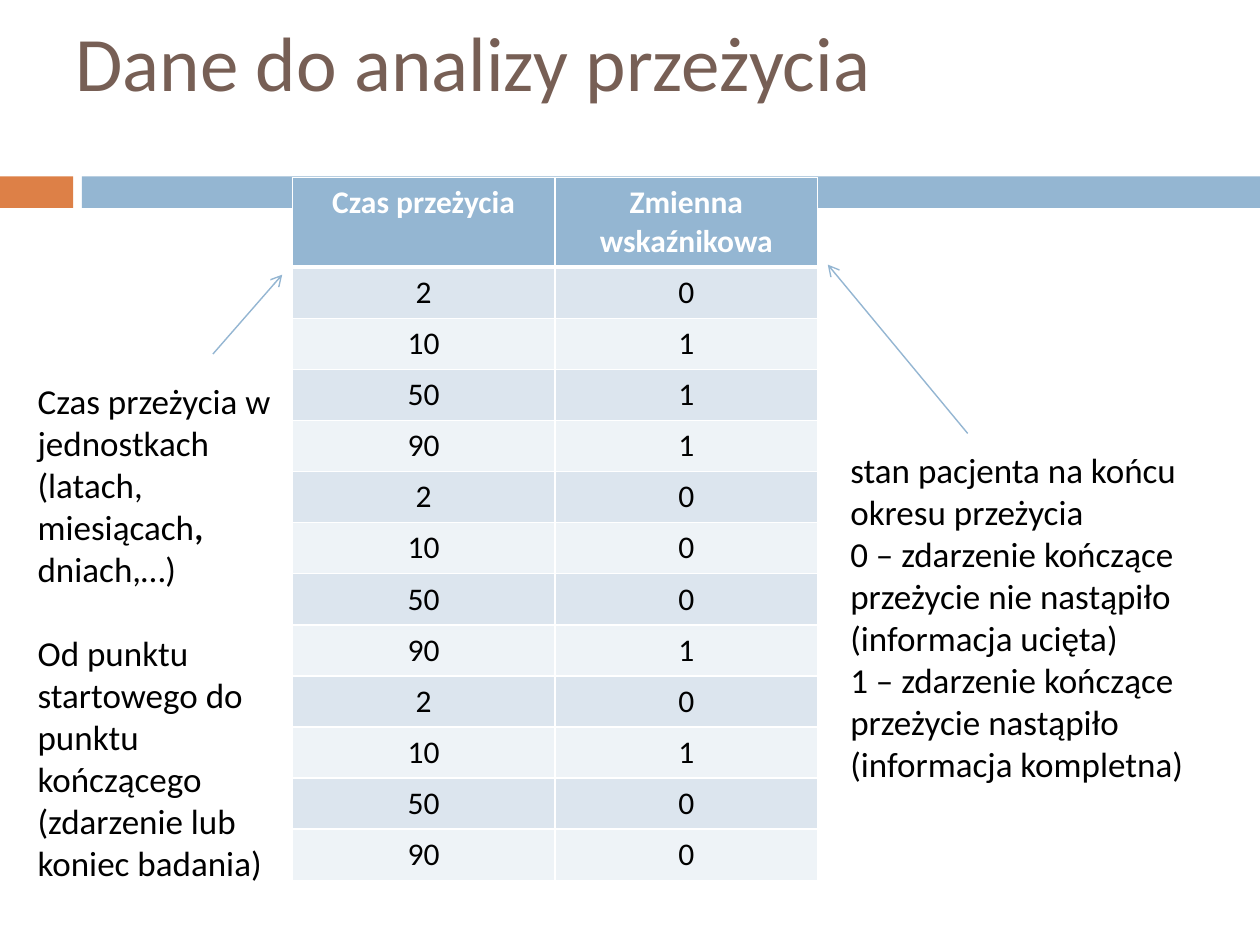
from dataclasses import dataclass

from pptx import Presentation
from pptx.dml.color import RGBColor
from pptx.enum.shapes import MSO_CONNECTOR, MSO_SHAPE
from pptx.enum.text import MSO_ANCHOR, MSO_AUTO_SIZE, PP_ALIGN
from pptx.oxml.ns import qn
from pptx.oxml.xmlchemy import OxmlElement
from pptx.slide import Slide
from pptx.table import _Cell
from pptx.text.text import _Paragraph
from pptx.util import Inches, Pt

COLUMNS, ROWS = 100, 75
WIDTH, HEIGHT = Inches(10), Inches(7.5)
FONT = "Calibri"
BLUE, ORANGE, BROWN = "94B6D2", "DD8047", "775F55"
WHITE, BLACK = "FFFFFF", "000000"
STRIPES = ("DCE5EE", "EEF3F7")
HEADER_ROWS, TABLE_ROWS = 7, 55.7

HEADERS = ("Czas przeżycia", "Zmienna wskaźnikowa")
TIMES = (2, 10, 50, 90) * 3
STATES = (0, 1, 1, 1, 0, 0, 0, 1, 0, 1, 0, 0)


@dataclass(frozen=True)
class Area:
    column: float
    row: float
    columns: float
    rows: float

    def box(self) -> tuple[int, int, int, int]:
        return (across(self.column), down(self.row),
                across(self.columns), down(self.rows))


@dataclass(frozen=True)
class Band:
    area: Area
    fill: str


@dataclass(frozen=True)
class Arrow:
    start: tuple[float, float]
    end: tuple[float, float]


@dataclass(frozen=True)
class Note:
    area: Area
    paragraphs: tuple[tuple[tuple[str, bool], ...], ...]
    gap: float = 0


BANDS = (
    Band(Area(0, 14, 5.8, 2.5), ORANGE),
    Band(Area(6.5, 14, 93.5, 2.5), BLUE),
)
ARROWS = (
    Arrow((76.8, 34.4), (65.7, 21)),
    Arrow((16.9, 28.1), (22.4, 21.8)),
)
NOTES = (
    Note(Area(66.5, 35.1, 29.1, 27.9), (
        (("stan pacjenta na końcu okresu przeżycia", False),),
        (("0 – zdarzenie kończące przeżycie nie nastąpiło", False),),
        (("(informacja ucięta)", False),),
        (("1 – zdarzenie kończące przeżycie nastąpiło (informacja kompletna)", False),),
    )),
    Note(Area(2, 29.6, 20.5, 41.4), (
        (("Czas przeżycia w jednostkach (latach, miesiącach", False),
         (", ", True), ("dniach,…)", False)),
        (("Od punktu startowego do punktu kończącego (zdarzenie lub koniec badania)", False),),
    ), gap=24),
)


def across(columns: float) -> int:
    return round(WIDTH * columns / COLUMNS)


def down(rows: float) -> int:
    return round(HEIGHT * rows / ROWS)


def colour(value: str) -> RGBColor:
    return RGBColor.from_string(value)


def add_run(paragraph: _Paragraph, text: str, size: float, value: str,
            bold: bool = False) -> None:
    run = paragraph.add_run()
    run.text = text
    run.font.name = FONT
    run.font.size = Pt(size)
    run.font.bold = bold
    run.font.color.rgb = colour(value)


def draw_band(slide: Slide, band: Band) -> None:
    shape = slide.shapes.add_shape(MSO_SHAPE.RECTANGLE, *band.area.box())
    shape.shadow.inherit = False
    shape.fill.solid()
    shape.fill.fore_color.rgb = colour(band.fill)
    shape.line.fill.background()


def draw_title(slide: Slide, area: Area, text: str) -> None:
    title = slide.shapes.title
    title.left, title.top, title.width, title.height = area.box()
    title.text_frame.vertical_anchor = MSO_ANCHOR.MIDDLE
    paragraph = title.text_frame.paragraphs[0]
    paragraph.alignment = PP_ALIGN.LEFT
    add_run(paragraph, text, 44, BROWN)


def draw_border(cell: _Cell, side: str, width: float) -> None:
    line = OxmlElement(f"a:ln{side}")
    line.set("w", str(Pt(width)))
    fill = OxmlElement("a:solidFill")
    shade = OxmlElement("a:srgbClr")
    shade.set("val", WHITE)
    fill.append(shade)
    line.append(fill)
    cell._tc.get_or_add_tcPr().append(line)


def fill_cell(cell: _Cell, text: str, row: int) -> None:
    header = row == 0
    widths = {"L": 1, "R": 1, "T": 3 if row == 1 else 1, "B": 3 if header else 1}
    for side, width in widths.items():
        draw_border(cell, side, width)
    cell.fill.solid()
    cell.fill.fore_color.rgb = colour(BLUE if header else STRIPES[(row - 1) % 2])
    paragraph = cell.text_frame.paragraphs[0]
    paragraph.alignment = PP_ALIGN.CENTER
    add_run(paragraph, text, 18, WHITE if header else BLACK, header)


def draw_table(slide: Slide, area: Area) -> None:
    records = [HEADERS, *zip(TIMES, STATES)]
    table = slide.shapes.add_table(len(records), len(HEADERS), *area.box()).table
    body_height = down((area.rows - HEADER_ROWS) / len(TIMES))
    for row, record in enumerate(records):
        table.rows[row].height = body_height if row else down(HEADER_ROWS)
        for column, value in enumerate(record):
            fill_cell(table.cell(row, column), str(value), row)


def draw_arrow(slide: Slide, arrow: Arrow) -> None:
    points = [length for column, row in (arrow.start, arrow.end)
              for length in (across(column), down(row))]
    connector = slide.shapes.add_connector(MSO_CONNECTOR.STRAIGHT, *points)
    connector.line.color.rgb = colour(BLUE)
    connector.line.width = Pt(0.79)
    properties = connector._element.spPr
    head = OxmlElement("a:tailEnd")
    head.set("type", "arrow")
    properties.find(qn("a:ln")).append(head)
    properties.append(OxmlElement("a:effectLst"))


def draw_note(slide: Slide, note: Note) -> None:
    frame = slide.shapes.add_textbox(*note.area.box()).text_frame
    frame.word_wrap = True
    frame.auto_size = MSO_AUTO_SIZE.SHAPE_TO_FIT_TEXT
    for index, runs in enumerate(note.paragraphs):
        paragraph = frame.add_paragraph() if index else frame.paragraphs[0]
        paragraph.space_before = Pt(note.gap if index else 0)
        for text, bold in runs:
            add_run(paragraph, text, 20, BLACK, bold)


def main() -> None:
    presentation = Presentation()
    presentation.slide_width, presentation.slide_height = WIDTH, HEIGHT
    slide = presentation.slides.add_slide(presentation.slide_layouts[5])
    for band in BANDS:
        draw_band(slide, band)
    draw_title(slide, Area(5, 0.5, 81.7, 8.7), "Dane do analizy przeżycia")
    draw_table(slide, Area(23.2, 14.1, 41.7, TABLE_ROWS))
    for arrow in ARROWS:
        draw_arrow(slide, arrow)
    for note in NOTES:
        draw_note(slide, note)
    presentation.save("out.pptx")


if __name__ == "__main__":
    main()
